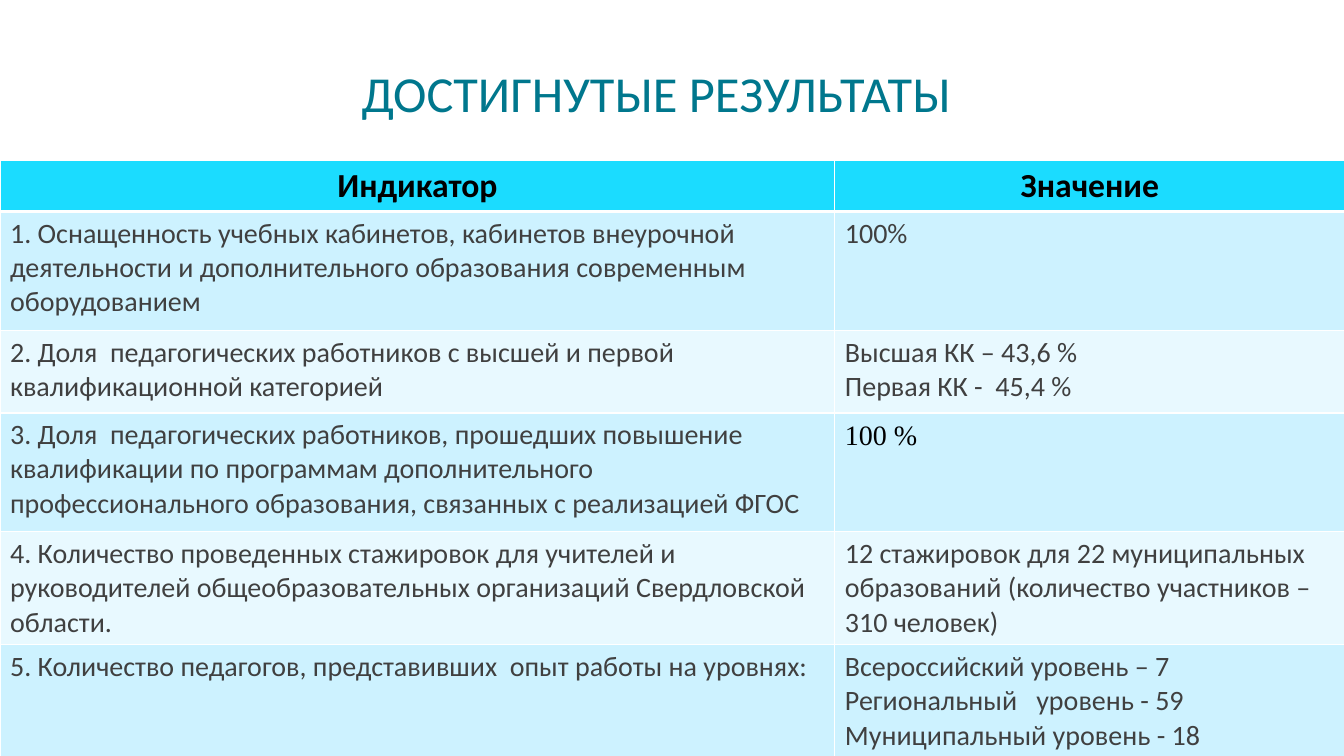
from dataclasses import dataclass

from lxml.etree import SubElement
from pptx import Presentation
from pptx.dml.color import RGBColor
from pptx.enum.text import MSO_ANCHOR, PP_ALIGN as Align
from pptx.oxml.ns import qn
from pptx.slide import Slide
from pptx.table import _Cell as Cell
from pptx.text.text import _Paragraph as Paragraph
from pptx.util import Inches, Pt


@dataclass(frozen=True)
class Theme:
    font: str = "Calibri"
    serif: str = "Times New Roman"
    title: str = "00778D"
    black: str = "000000"
    body: str = "404040"
    border: str = "FFFFFF"
    header_fill: str = "1BDCFF"
    bands: tuple[str, str] = ("CDF2FF", "E8F9FF")
    title_size: int = 36
    header_size: int = 24
    body_size: int = 20


THEME = Theme()


@dataclass(frozen=True)
class TextStyle:
    size: int
    color: str
    font: str = THEME.font
    bold: bool = False
    align: Align | None = None
    spacing: float | None = None


TITLE = TextStyle(THEME.title_size, THEME.title, align=Align.CENTER, spacing=0.85)
HEADER = TextStyle(THEME.header_size, THEME.black, bold=True, align=Align.CENTER)
BODY = TextStyle(THEME.body_size, THEME.body)
SERIF = TextStyle(THEME.body_size, THEME.black, THEME.serif,
                  align=Align.JUSTIFY, spacing=1.07)


@dataclass(frozen=True)
class Result:
    height: float
    indicator: str
    values: tuple[str, ...]
    value_style: TextStyle = BODY


RESULTS = (
    Result(1.18, "1. Оснащенность учебных кабинетов, кабинетов внеурочной деятельности "
                 "и дополнительного образования современным оборудованием", ("100%",)),
    Result(0.82, "2. Доля  педагогических работников с высшей и первой "
                 "квалификационной категорией",
           ("Высшая КК – 43,6 %", "Первая КК -  45,4 %")),
    Result(1.18, "3. Доля  педагогических работников, прошедших повышение квалификации "
                 "по программам дополнительного профессионального образования, "
                 "связанных с реализацией ФГОС", ("100 % ",), SERIF),
    Result(1.12, "4. Количество проведенных стажировок для учителей и руководителей "
                 "общеобразовательных организаций Свердловской области.",
           ("12 стажировок для 22 муниципальных образований "
            "(количество участников – 310 человек)",)),
    Result(1.12, "5. Количество педагогов, представивших  опыт работы на уровнях:",
           ("Всероссийский уровень – 7", "Региональный   уровень - 59",
            "Муниципальный уровень - 18")),
)
HEADINGS = ("Индикатор", "Значение")
HEADER_HEIGHT = 0.5
COLUMN_WIDTHS = (8.28, 5.06)


def write(para: Paragraph, text: str, style: TextStyle) -> None:
    para.alignment = style.align
    para.line_spacing = style.spacing
    span = para.add_run()
    span.text = text
    span.font.name = style.font
    span.font.size = Pt(style.size)
    span.font.bold = style.bold
    span.font.color.rgb = RGBColor.from_string(style.color)


def add_borders(cell: Cell, bottom: float) -> None:
    properties = cell._tc.get_or_add_tcPr()
    for side, width in (("L", 1), ("R", 1), ("T", 1), ("B", bottom)):
        line = SubElement(properties, qn(f"a:ln{side}"), w=str(Pt(width)))
        fill = SubElement(line, qn("a:solidFill"))
        SubElement(fill, qn("a:srgbClr"), val=THEME.border)


def fill_cell(cell: Cell, lines: tuple[str, ...], style: TextStyle,
              fill: str, bottom: float = 1) -> None:
    add_borders(cell, bottom)
    cell.fill.solid()
    cell.fill.fore_color.rgb = RGBColor.from_string(fill)
    frame = cell.text_frame
    for index, text in enumerate(lines):
        write(frame.add_paragraph() if index else frame.paragraphs[0], text, style)


def add_title(page: Slide) -> None:
    title = page.shapes.title
    title.left, title.top = Inches(1.44), Inches(0.43)
    title.width, title.height = Inches(10.25), Inches(0.84)
    title.text_frame.vertical_anchor = MSO_ANCHOR.BOTTOM
    write(title.text_frame.paragraphs[0], "ДОСТИГНУТЫЕ РЕЗУЛЬТАТЫ ", TITLE)


def add_results_table(page: Slide) -> None:
    heights = (HEADER_HEIGHT, *(result.height for result in RESULTS))
    table = page.shapes.add_table(
        len(heights), len(COLUMN_WIDTHS), Inches(0), Inches(1.59),
        Inches(sum(COLUMN_WIDTHS)), Inches(sum(heights))).table
    for column, width in zip(table.columns, COLUMN_WIDTHS):
        column.width = Inches(width)
    for row, height in zip(table.rows, heights):
        row.height = Inches(height)

    for column, heading in enumerate(HEADINGS):
        fill_cell(table.cell(0, column), (heading,), HEADER, THEME.header_fill, bottom=3)
    for index, result in enumerate(RESULTS):
        band = THEME.bands[index % 2]
        fill_cell(table.cell(index + 1, 0), (result.indicator,), BODY, band)
        fill_cell(table.cell(index + 1, 1), result.values, result.value_style, band)


def main() -> None:
    deck = Presentation()
    deck.slide_width, deck.slide_height = Inches(13.33), Inches(7.5)
    page = deck.slides.add_slide(deck.slide_layouts.get_by_name("Title Only"))
    add_title(page)
    add_results_table(page)
    deck.save("out.pptx")


if __name__ == "__main__":
    main()
